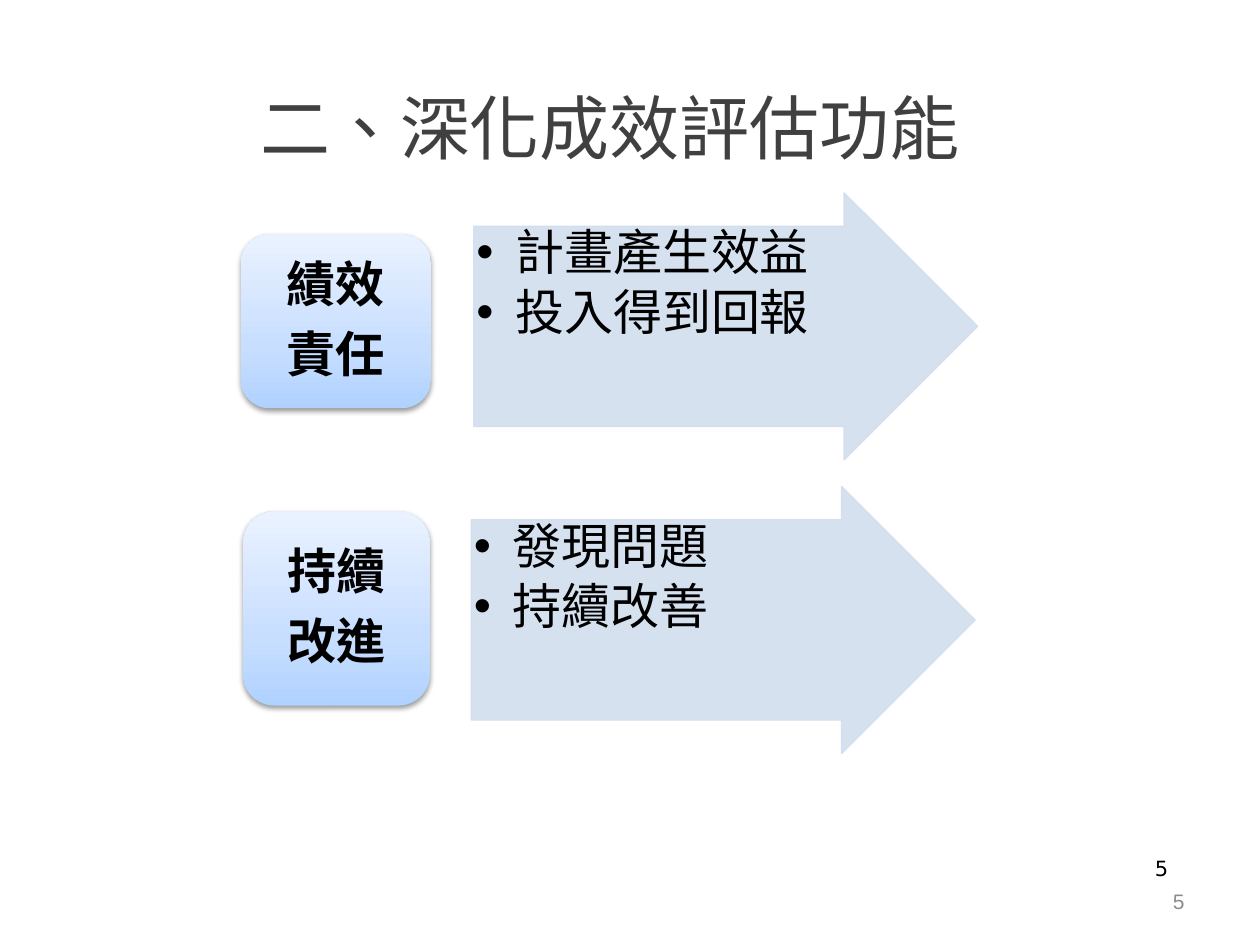
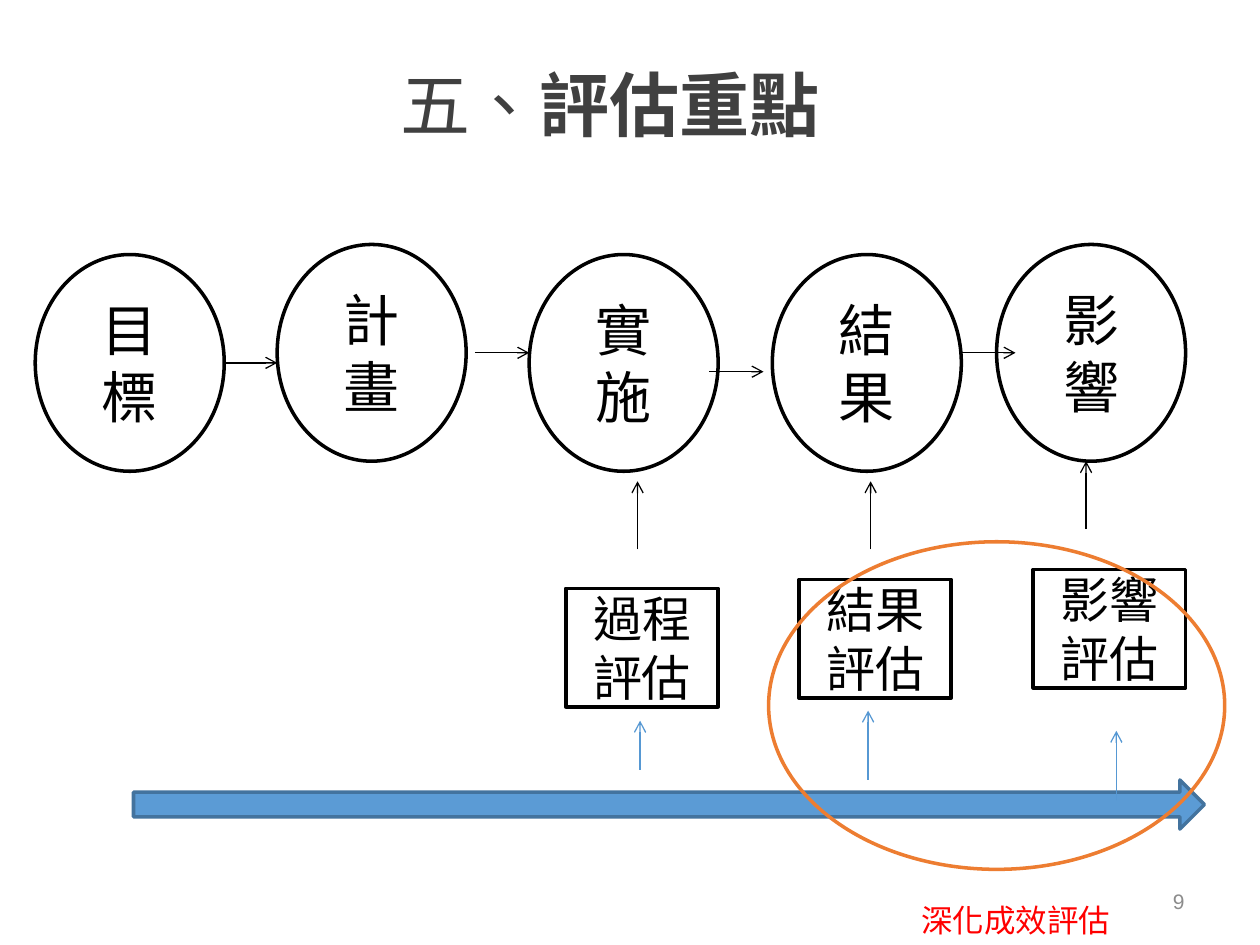
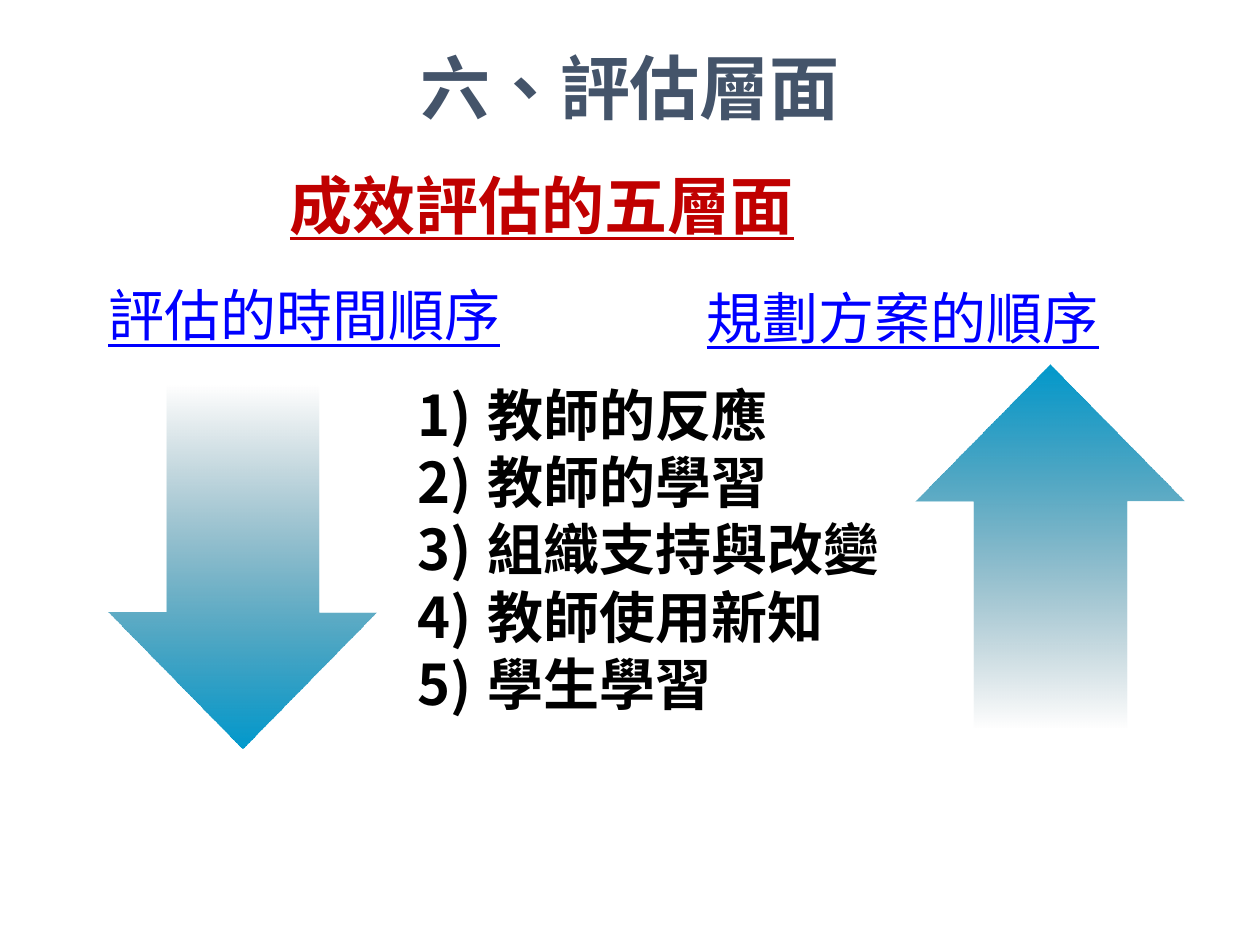
"""Build three slides on deepening the evaluation of programme results."""
import lxml.etree
import pptx
import pptx.dml.color
import pptx.enum.dml
import pptx.enum.shapes
import pptx.enum.text
import pptx.oxml.ns
import pptx.util

Inches = pptx.util.Inches
Pt = pptx.util.Pt
RGBColor = pptx.dml.color.RGBColor
SHAPE = pptx.enum.shapes.MSO_SHAPE
ALIGN = pptx.enum.text.PP_ALIGN
ANCHOR = pptx.enum.text.MSO_ANCHOR
qn = pptx.oxml.ns.qn
SubElement = lxml.etree.SubElement

CJK = "Noto Sans CJK SC"
BLACK = RGBColor(0x00, 0x00, 0x00)
WHITE = RGBColor(0xFF, 0xFF, 0xFF)
TITLE_GRAY = RGBColor(0x40, 0x40, 0x40)
TITLE_SLATE = RGBColor(0x44, 0x54, 0x6A)
PAGE_GRAY = RGBColor(0x8C, 0x8C, 0x8C)
PALE_BLUE = RGBColor(0xD2, 0xDE, 0xEF)
BLUE = RGBColor(0x5B, 0x9B, 0xD5)
BLUE_EDGE = RGBColor(0x43, 0x73, 0x9E)
BLUE_LINE = RGBColor(0x56, 0x98, 0xD3)
ORANGE = RGBColor(0xED, 0x7D, 0x31)
RED = RGBColor(0xFF, 0x00, 0x00)
DARK_RED = RGBColor(0xC0, 0x00, 0x00)
LINK_BLUE = RGBColor(0x00, 0x00, 0xFF)
SKY = RGBColor(0x00, 0x99, 0xCC)
DEEP_TEAL = RGBColor(0x00, 0x47, 0x5E)
BADGE_STOPS = [
    (0, RGBColor(0xB0, 0xD2, 0xFF), 100),
    (35, RGBColor(0xC7, 0xDE, 0xFF), 100),
    (100, RGBColor(0xEA, 0xF2, 0xFF), 100),
]
ARROW_STOPS = [(0, SKY, 100), (100, DEEP_TEAL, 0)]


def write(sp, text, at=None, size=28, color=BLACK, font=CJK, bold=False,
          bold_tail="", underline=False, align=ALIGN.CENTER, anchor=ANCHOR.TOP,
          bullet=None, indent=0, line_spacing=1.0, space_after=0, inset=None,
          wrap=True):
    """Place a shape and fill it with one formatted paragraph per line."""
    if at:
        sp.left, sp.top, sp.width, sp.height = [Inches(v) for v in at]
    tf = sp.text_frame
    tf.auto_size = pptx.enum.text.MSO_AUTO_SIZE.NONE
    tf.word_wrap = wrap
    tf.vertical_anchor = anchor
    if inset is not None:
        tf.margin_left = tf.margin_right = Inches(inset)
        tf.margin_top = tf.margin_bottom = Inches(inset)
    for i, line in enumerate(text.split("\n")):
        p = tf.add_paragraph() if i else tf.paragraphs[0]
        p.alignment = align
        p.line_spacing = line_spacing
        p.space_before = Pt(0)
        p.space_after = Pt(space_after)
        if bullet:
            pPr = p._p.get_or_add_pPr()
            pPr.set("marL", str(Inches(indent)))
            pPr.set("indent", str(-Inches(indent)))
            if bullet == "•":
                SubElement(pPr, qn("a:buFont"), typeface="Arial")
                SubElement(pPr, qn("a:buChar"), char=bullet)
            else:
                SubElement(pPr, qn("a:buFont"), typeface="+mj-lt")
                SubElement(pPr, qn("a:buAutoNum"), type=bullet)
        for part, is_bold in ((line, bold), (bold_tail, True)):
            if not part:
                continue
            r = p.add_run()
            r.text = part
            r.font.size = Pt(size)
            r.font.bold = is_bold
            r.font.underline = underline
            r.font.color.rgb = color
            r.font.name = font
            rPr = r._r.get_or_add_rPr()
            rPr.set("lang", "zh-TW")
            SubElement(rPr, qn("a:ea"), typeface=CJK)


def add_shape(s, kind, at, fill=None, line=None, width=2, stops=None, angle=0):
    """Add a preset shape with a solid, gradient or empty fill."""
    sp = s.shapes.add_shape(kind, *[Inches(v) for v in at])
    sp.shadow.inherit = False
    if stops:
        spPr = sp.element.spPr
        grad = lxml.etree.Element(qn("a:gradFill"), rotWithShape="1")
        spPr.find(qn("a:prstGeom")).addnext(grad)
        gs_list = SubElement(grad, qn("a:gsLst"))
        for pos, rgb, alpha in stops:
            gs = SubElement(gs_list, qn("a:gs"), pos=str(pos * 1000))
            clr = SubElement(gs, qn("a:srgbClr"), val=str(rgb))
            SubElement(clr, qn("a:alpha"), val=str(alpha * 1000))
        SubElement(grad, qn("a:lin"), ang=str(angle * 60000), scaled="0")
    elif fill is None:
        sp.fill.background()
    else:
        sp.fill.solid()
        sp.fill.fore_color.rgb = fill
    if line is None:
        sp.line.fill.background()
    else:
        sp.line.color.rgb = line
        sp.line.width = Pt(width)
    return sp


prs = pptx.Presentation()
prs.slide_width = Inches(10)
prs.slide_height = Inches(7.5)
two_lists, title_only, one_list = [prs.slide_layouts[i] for i in (3, 5, 1)]
slides = [prs.slides.add_slide(lay) for lay in (two_lists, title_only, one_list)]

titles = [
    ("二、深化成效評估功能", "", (1.09, 0.62, 7.5, 0.87), TITLE_GRAY, False),
    ("五、", "評估重點", (1.09, 0.44, 7.5, 1.05), TITLE_GRAY, False),
    ("六、評估層面", "", (0.5, 0.3, 9, 1.25), TITLE_SLATE, True),
]
for s, (text, tail, at, color, bold) in zip(slides, titles):
    write(s.shapes.title, text, at, size=40, color=color, bold=bold, bold_tail=tail)

for s, number in zip(slides, ("5", "9")):
    sp = s.shapes.add_textbox(0, 0, 0, 0)
    write(sp, number, (7.17, 6.95, 2.33, 0.4), size=12, color=PAGE_GRAY,
          font="Arial", align=ALIGN.RIGHT, anchor=ANCHOR.MIDDLE)

s = slides[0]
sp = s.shapes.add_textbox(0, 0, 0, 0)
write(sp, "5", (7.2, 6.74, 2.17, 0.52), size=12, font="DejaVu Sans", align=ALIGN.RIGHT)

goals = [
    ("績效\n責任", (1.91, 1.86, 1.51, 1.38), "計畫產生效益\n投入得到回報", 3.76, 1.53),
    ("持續\n改進", (1.93, 4.06, 1.48, 1.54), "發現問題\n持續改善", 3.74, 3.86),
]
for idx, (label, badge_at, points, left, top) in enumerate(goals, 1):
    sp = add_shape(s, SHAPE.RIGHT_ARROW, (left, top, 4, 2.12), PALE_BLUE, PALE_BLUE, 0.75)
    sp.adjustments[0], sp.adjustments[1] = 0.75, 0.5
    for clr in sp.element.spPr.iter(qn("a:srgbClr")):
        SubElement(clr, qn("a:alpha"), val="90000")

    body = s.placeholders[idx]
    write(body, points, (left, top + 0.26, 3.21, 1.59), font="Calibri",
          align=ALIGN.LEFT, bullet="•", indent=0.31, line_spacing=0.9,
          space_after=4.2, inset=0.02)
    s.shapes.element.append(body.element)

    sp = add_shape(s, SHAPE.ROUNDED_RECTANGLE, badge_at, stops=BADGE_STOPS, angle=270)
    shadow = SubElement(sp.element.spPr.find(qn("a:effectLst")), qn("a:outerShdw"),
                        blurRad=str(Pt(3.1)), dist=str(Pt(1.6)), dir="5400000",
                        rotWithShape="0")
    clr = SubElement(shadow, qn("a:srgbClr"), val=str(BLACK))
    SubElement(clr, qn("a:alpha"), val="38000")
    write(sp, label, bold=True, anchor=ANCHOR.MIDDLE, line_spacing=0.9, space_after=9.8)

s = slides[1]
stages = [("目標", 0.28, 2.02), ("計畫", 2.2, 1.94), ("實施", 4.2, 2.02),
          ("結果", 6.13, 2.02), ("影響", 7.91, 1.94)]
for label, left, top in stages:
    sp = add_shape(s, SHAPE.OVAL, (left, top, 1.5, 1.72), WHITE, BLACK)
    write(sp, label, size=32, anchor=ANCHOR.MIDDLE)

checks = [("過程評估", 4.49, 4.67), ("結果評估", 6.34, 4.6), ("影響評估", 8.2, 4.52)]
for label, left, top in checks:
    sp = add_shape(s, SHAPE.RECTANGLE, (left, top, 1.21, 0.94), WHITE, BLACK)
    write(sp, label, anchor=ANCHOR.MIDDLE)

add_shape(s, SHAPE.RIGHT_ARROW, (1.06, 6.19, 8.5, 0.39), BLUE, BLUE_EDGE)

links = [(x, y, x + 0.43, y, BLACK)
         for x, y in ((1.77, 2.88), (3.77, 2.8), (5.63, 2.95), (7.63, 2.8))]
links += [(x, y, x, y - 0.54, BLACK)
          for x, y in ((5.06, 4.36), (6.91, 4.36), (8.62, 4.2))]
links += [(x, y, x, end, BLUE_LINE)
          for x, y, end in ((5.08, 6.11, 5.72), (6.89, 6.19, 5.64), (8.86, 6.35, 5.8))]
for x1, y1, x2, y2, color in links:
    cx = s.shapes.add_connector(pptx.enum.shapes.MSO_CONNECTOR.STRAIGHT,
                                Inches(x1), Inches(y1), Inches(x2), Inches(y2))
    cx.line.color.rgb = color
    cx.line.width = Pt(0.75)
    spPr = cx.element.spPr
    SubElement(spPr.find(qn("a:ln")), qn("a:tailEnd"), type="arrow")
    SubElement(spPr, qn("a:effectLst"))

add_shape(s, SHAPE.OVAL, (6.1, 4.3, 3.62, 2.6), line=ORANGE)
sp = s.shapes.add_textbox(0, 0, 0, 0)
write(sp, "深化成效評估", (7.2, 7.1, 1.72, 0.4), size=18, color=RED, wrap=False)

s = slides[2]
sp = s.shapes.add_textbox(0, 0, 0, 0)
write(sp, "成效評估的五層面", (0.86, 1.27, 6.88, 0.71), size=36, color=DARK_RED,
      bold=True, underline=True)

orders = [
    ("評估的時間順序", (0.76, 2.18, 4.24, 0.64), (0.86, 3.05, 2.13, 2.89), 180),
    ("規劃方案的順序", (5.51, 2.2, 4.45, 0.64), (7.27, 2.89, 2.13, 2.89), 0),
]
for label, label_at, arrow_at, rotation in orders:
    sp = s.shapes.add_textbox(0, 0, 0, 0)
    write(sp, label, label_at, size=32, color=LINK_BLUE, underline=True, align=ALIGN.LEFT)
    sp = add_shape(s, SHAPE.UP_ARROW, arrow_at, stops=ARROW_STOPS, angle=90)
    sp.adjustments[0], sp.adjustments[1] = 0.57, 0.51
    sp.rotation = rotation

levels = "教師的反應\n教師的學習\n組織支持與改變\n教師使用新知\n學生學習"
write(s.placeholders[1], levels, (3.21, 2.97, 4, 2.79), size=32, bold=True,
      align=ALIGN.LEFT, bullet="arabicParenR", indent=0.56)

prs.save("out.pptx")
